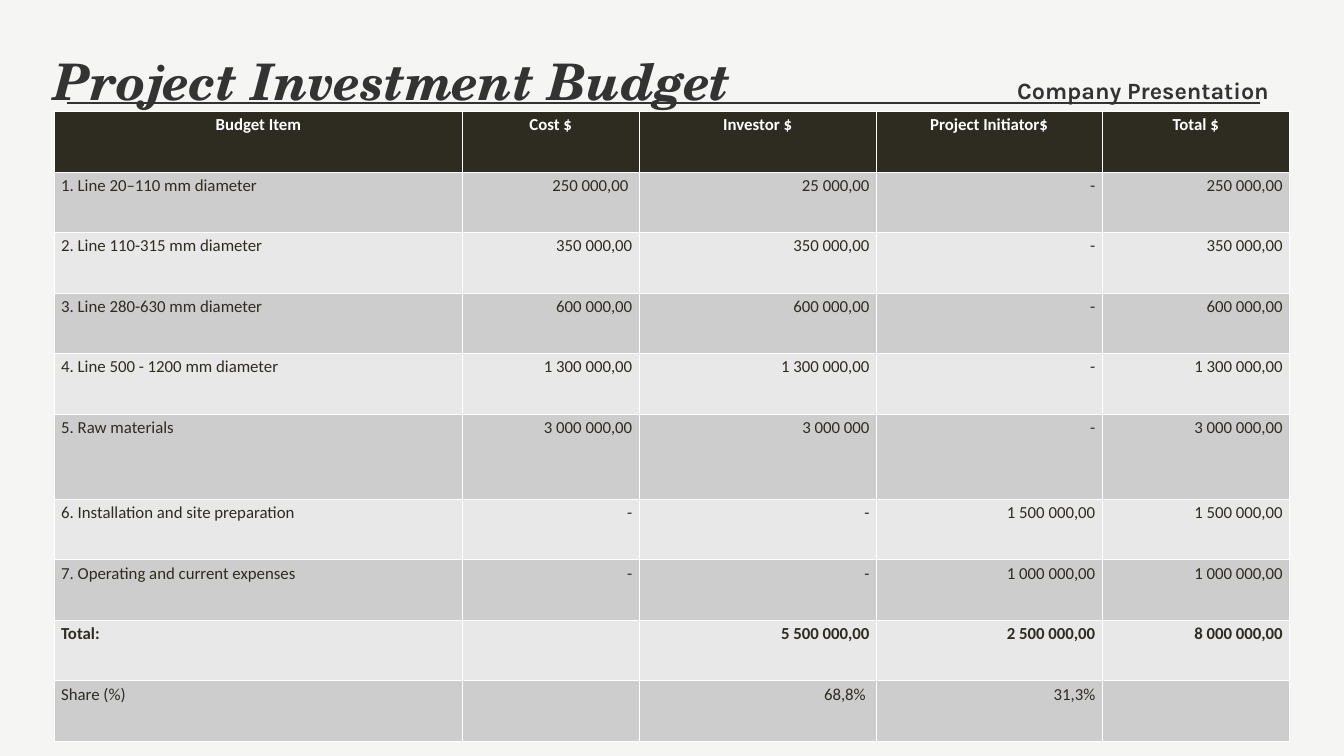
from lxml import etree
from pptx import Presentation
from pptx.dml.color import RGBColor
from pptx.enum.shapes import MSO_CONNECTOR
from pptx.enum.text import MSO_ANCHOR, MSO_AUTO_SIZE, PP_ALIGN
from pptx.oxml.ns import qn
from pptx.util import Inches, Pt

LEFT, CENTER, RIGHT = PP_ALIGN.LEFT, PP_ALIGN.CENTER, PP_ALIGN.RIGHT

PAPER = RGBColor(0xF5, 0xF5, 0xF4)
CHARCOAL = RGBColor(0x33, 0x33, 0x33)
OLIVE = RGBColor(0x2E, 0x2B, 0x21)
WHITE = RGBColor(0xFF, 0xFF, 0xFF)
BANDS = (RGBColor(0xE8, 0xE8, 0xE8), RGBColor(0xCD, 0xCD, 0xCD))

TITLE = "Project Investment Budget"
TAGLINE = "Company Presentation"
BUDGET = [
    ("Budget Item", "Cost $", "Investor $", "Project Initiator$", "Total $"),
    ("1. Line 20–110 mm diameter", "250 000,00 ", "25 000,00", "-", "250 000,00"),
    ("2. Line 110-315 mm diameter", "350 000,00", "350 000,00", "-", "350 000,00"),
    ("3. Line 280-630 mm diameter", "600 000,00", "600 000,00", "-", "600 000,00"),
    ("4. Line 500 - 1200 mm diameter", "1 300 000,00", "1 300 000,00", "-", "1 300 000,00"),
    ("5. Raw materials", "3 000 000,00", "3 000 000", "-", "3 000 000,00"),
    ("6. Installation and site preparation", "-", "-", "1 500 000,00", "1 500 000,00"),
    ("7. Operating and current expenses", "-", "-", "1 000 000,00", "1 000 000,00"),
    ("Total:", "", "5 500 000,00", "2 500 000,00", "8 000 000,00"),
    ("Share (%)", "", "68,8% ", "31,3%", ""),
]
COLUMN_WIDTHS = (6.07, 2.63, 3.53, 3.36, 2.79)
ROW_HEIGHT = 0.9
TALL_ROWS = {"5. Raw materials": 1.27}
BOLD_ROWS = ("Budget Item", "Total:")


def style_paragraph(para, font, size, color, bold, align, italic=False):
    para.alignment = align
    for span in para.runs:
        span.font.name = font
        span.font.size = Pt(size)
        span.font.color.rgb = color
        span.font.bold = bold
        span.font.italic = italic


def set_heading(box, place, text, line_spacing, **style):
    """Place a text shape without margins and fill it with one styled line."""
    box.left, box.top, box.width, box.height = map(Inches, place)
    frame = box.text_frame
    frame.text = text
    frame.word_wrap = True
    frame.auto_size = MSO_AUTO_SIZE.NONE
    frame.vertical_anchor = MSO_ANCHOR.TOP
    frame.margin_left = frame.margin_top = frame.margin_right = frame.margin_bottom = 0
    para = frame.paragraphs[0]
    para.line_spacing = Pt(line_spacing)
    style_paragraph(para, color=CHARCOAL, bold=True, **style)


def add_rule(page, left, right, top):
    rule = page.shapes.add_connector(
        MSO_CONNECTOR.STRAIGHT, Inches(left), Inches(top), Inches(right), Inches(top))
    rule.line.color.rgb = CHARCOAL
    rule.line.width = Pt(2.25)
    etree.SubElement(rule._element.spPr, qn("a:effectLst"))


def add_budget_table(page, left, top):
    heights = [TALL_ROWS.get(row[0], ROW_HEIGHT) for row in BUDGET]
    table = page.shapes.add_table(
        len(BUDGET), len(COLUMN_WIDTHS), Inches(left), Inches(top),
        Inches(sum(COLUMN_WIDTHS)), Inches(sum(heights))).table
    for column, width in zip(table.columns, COLUMN_WIDTHS):
        column.width = Inches(width)
    for row_index, (values, height) in enumerate(zip(BUDGET, heights)):
        is_header = row_index == 0
        table.rows[row_index].height = Inches(height)
        for column_index, value in enumerate(values):
            cell = table.cell(row_index, column_index)
            cell.fill.solid()
            cell.fill.fore_color.rgb = OLIVE if is_header else BANDS[row_index % 2]
            cell.text = value
            align = CENTER if is_header else RIGHT if column_index else LEFT
            style_paragraph(cell.text_frame.paragraphs[0], "Calibri", 18,
                            WHITE if is_header else OLIVE, values[0] in BOLD_ROWS, align)


def main():
    deck = Presentation()
    deck.slide_width, deck.slide_height = Inches(20), Inches(11.25)
    page = deck.slides.add_slide(deck.slide_layouts.get_by_name("Title Only"))
    page.background.fill.solid()
    page.background.fill.fore_color.rgb = PAPER

    tagline = page.shapes.add_textbox(0, 0, 0, 0)
    set_heading(tagline, (13.37, 1.06, 5.51, 0.47), TAGLINE, 35,
                font="Karla", size=25, align=RIGHT)
    set_heading(page.shapes.title, (0.79, 0.39, 13.96, 1.14), TITLE, 90,
                font="TeX Gyre Schola", size=54, align=LEFT, italic=True)
    add_rule(page, 1, 18.75, 1.53)
    add_budget_table(page, 0.81, 1.66)
    deck.save("out.pptx")


if __name__ == "__main__":
    main()
